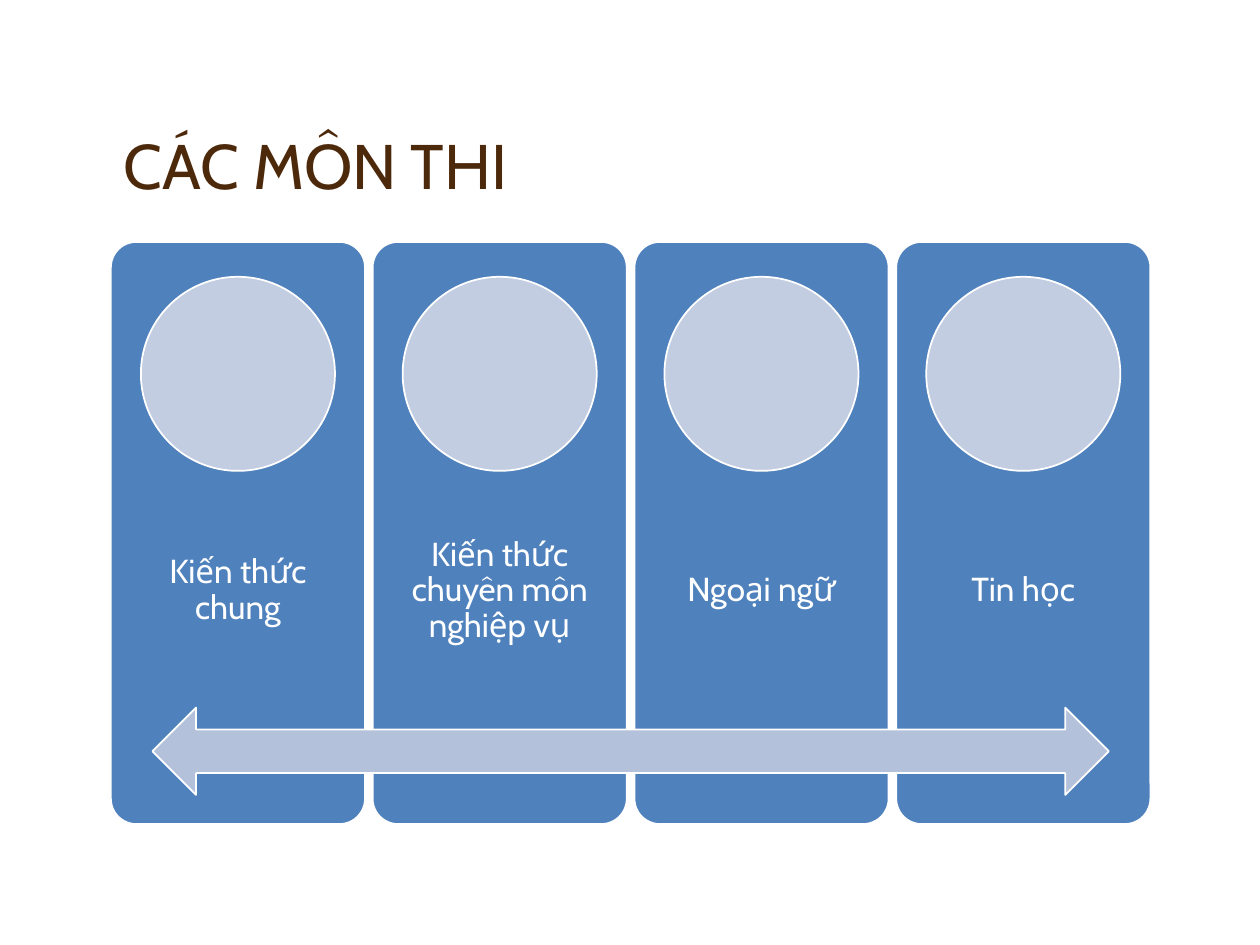
import pptx
import pptx.util
import pptx.dml.color
import pptx.enum.shapes
import pptx.enum.text

SHAPE = pptx.enum.shapes.MSO_SHAPE
ALIGN = pptx.enum.text.PP_ALIGN
ANCHOR = pptx.enum.text.MSO_ANCHOR
COLORS = {
    "title": "4D290B",
    "panel": "4F81BD",
    "circle": "C2CDE1",
    "arrow": "B3C1DB",
    "white": "FFFFFF",
}
SUBJECTS = ["Kiến thức chung", "Kiến thức chuyên môn nghiệp vụ", "Ngoại ngữ", "Tin học"]

# The diagram's frame in inches; everything inside it is a share of this frame.
LEFT, TOP, WIDTH, HEIGHT = 0.88, 1.92, 8.25, 4.62
GAP_SHARE = 0.03  # gap between panels, as a share of one panel


class Painter:
    font_name = "Cabin"
    line_spacing = 0.9
    outline = pptx.util.Pt(1)

    def __init__(self, slide):
        self.slide = slide

    def color(self, name):
        return pptx.dml.color.RGBColor.from_string(COLORS[name])

    def shape(self, kind, box, fill, corner=None):
        figure = self.slide.shapes.add_shape(kind, *map(pptx.util.Inches, box))
        figure.shadow.inherit = False
        figure.fill.solid()
        figure.fill.fore_color.rgb = self.color(fill)
        figure.line.color.rgb = self.color("white")
        figure.line.width = self.outline
        if corner is not None:
            figure.adjustments[0] = corner

    def text(self, words, box, size, color, align, anchor, inset):
        frame = self.slide.shapes.add_textbox(*map(pptx.util.Inches, box)).text_frame
        frame.word_wrap = True
        frame.vertical_anchor = anchor
        side, edge = map(pptx.util.Inches, inset)
        frame.margin_left = frame.margin_right = side
        frame.margin_top = frame.margin_bottom = edge
        paragraph = frame.paragraphs[0]
        paragraph.alignment = align
        paragraph.line_spacing = self.line_spacing
        run = paragraph.add_run()
        run.text = words
        run.font.name = self.font_name
        run.font.size = pptx.util.Pt(size)
        run.font.color.rgb = self.color(color)


def main():
    deck = pptx.Presentation()
    deck.slide_width = pptx.util.Inches(10)
    deck.slide_height = pptx.util.Inches(7.5)
    painter = Painter(deck.slides.add_slide(deck.slide_layouts[6]))

    painter.text("CÁC MÔN THI", (LEFT, 0.33, WIDTH, 1.33), 36, "title",
                 ALIGN.LEFT, ANCHOR.BOTTOM, (0.1, 0.05))

    count = len(SUBJECTS)
    panel = WIDTH / (count + (count - 1) * GAP_SHARE)
    diameter = HEIGHT / 3
    for index, subject in enumerate(SUBJECTS):
        left = LEFT + index * panel * (1 + GAP_SHARE)
        painter.shape(SHAPE.ROUNDED_RECTANGLE, (left, TOP, panel, HEIGHT), "panel", 0.1)
        painter.text(subject, (left, TOP + 0.4 * HEIGHT, panel, 0.4 * HEIGHT), 19, "white",
                     ALIGN.CENTER, ANCHOR.MIDDLE, (0.15, 0.15))
        painter.shape(SHAPE.OVAL, (left + (panel - diameter) / 2, TOP + 0.06 * HEIGHT,
                                   diameter, diameter), "circle")

    painter.shape(SHAPE.LEFT_RIGHT_ARROW, (LEFT + 0.04 * WIDTH, TOP + 0.8 * HEIGHT,
                                           0.92 * WIDTH, 0.15 * HEIGHT), "arrow")
    deck.save("out.pptx")


if __name__ == "__main__":
    main()
